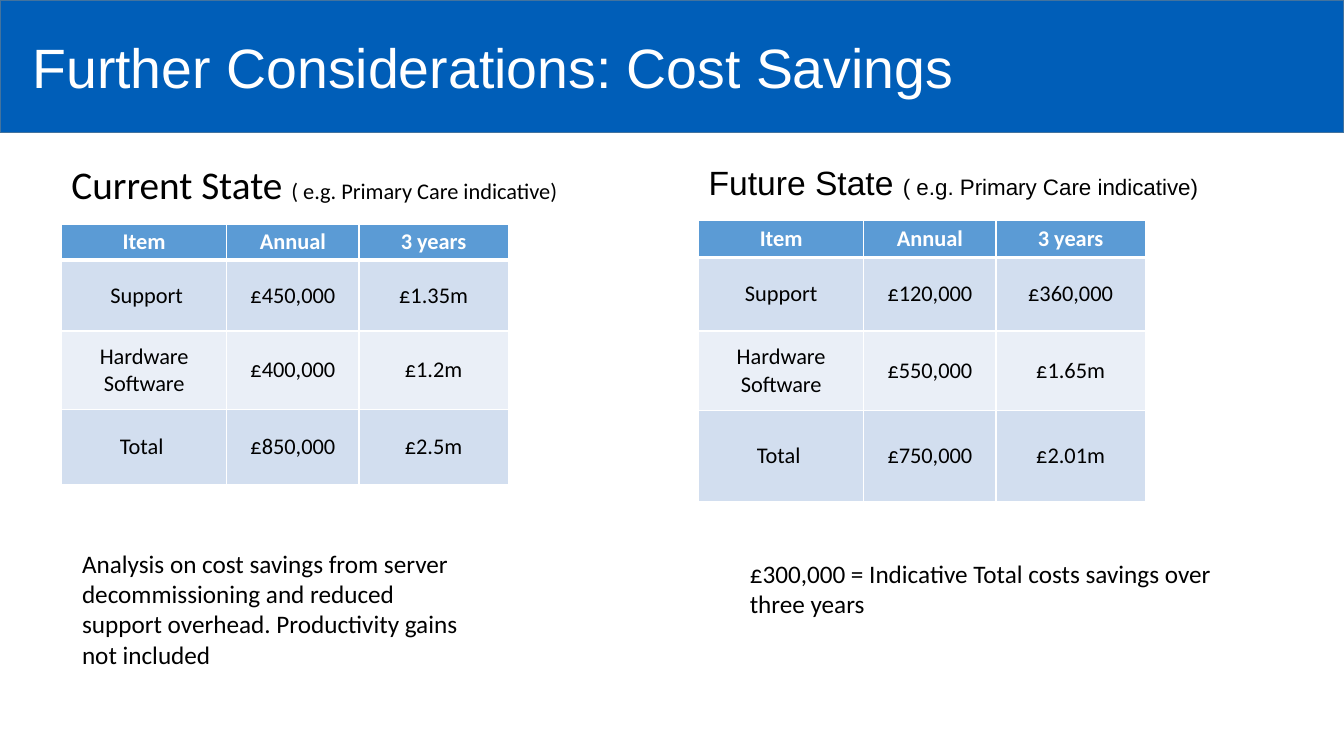
from lxml.etree import SubElement
from pptx import Presentation
from pptx.dml.color import RGBColor
from pptx.enum.shapes import MSO_SHAPE
from pptx.enum.text import MSO_ANCHOR, MSO_AUTO_SIZE, PP_ALIGN
from pptx.oxml import parse_xml
from pptx.oxml.ns import nsdecls, qn
from pptx.util import Pt

WHITE, BLACK = "FFFFFF", "000000"
COLUMN_WIDTHS = [118, 94.5, 106.5]
ROW_FILLS = ["5B9BD5", "D2DEEF", "EAEFF7", "D2DEEF"]
HEADINGS = ["Item", "Annual", "3 years"]
HEADING_LINE = {"line_spacing": 0.9, "space_before": Pt(0), "alignment": PP_ALIGN.LEFT}
FRAME = {"word_wrap": True, "auto_size": MSO_AUTO_SIZE.NONE}


def apply(target, values):
    for name, value in values.items():
        setattr(target, name, value)


def colour(hex_string):
    return RGBColor.from_string(hex_string)


def place(part, left, top, width, height):
    apply(part, {"left": Pt(left), "top": Pt(top), "width": Pt(width), "height": Pt(height)})


def write(paragraph, text, size, hex_string, font="Calibri", bold=False):
    run = paragraph.add_run()
    run.text = text
    apply(run.font, {"size": Pt(size), "name": font, "bold": bold})
    run.font.color.rgb = colour(hex_string)


def draw_title(slide, left, top, width, height):
    banner = slide.shapes.add_shape(MSO_SHAPE.RECTANGLE, Pt(left), Pt(top), Pt(width), Pt(height))
    banner.shadow.inherit = False
    banner.fill.solid()
    banner.fill.fore_color.rgb = colour("005EB8")
    banner.line.color.rgb = colour("43739E")
    banner.line.width = Pt(1)
    slide.shapes._spTree.insert(2, banner._element)
    title = slide.shapes.title
    place(title, left + 16, top + 12, 696, 76.5)
    apply(title.text_frame, {**FRAME, "vertical_anchor": MSO_ANCHOR.MIDDLE})
    line = title.text_frame.paragraphs[0]
    apply(line, HEADING_LINE)
    write(line, "Further Considerations: Cost Savings", 39.6, WHITE, "Arial")


def draw_heading(heading, left, top, state, size, font):
    place(heading, left, top, 393, 38)
    apply(heading.text_frame, {**FRAME, "vertical_anchor": MSO_ANCHOR.TOP})
    line = heading.text_frame.paragraphs[0]
    properties = line._p.get_or_add_pPr()
    properties.set("marL", "0")
    properties.set("indent", "0")
    SubElement(properties, qn("a:buNone"))
    apply(line, HEADING_LINE)
    write(line, state + " ", size, BLACK, font)
    write(line, "( e.g. Primary Care indicative)", 16, BLACK, font)


def draw_borders(cell, row):
    widths = {"L": 1, "R": 1, "T": 3 if row == 1 else 1, "B": 3 if row == 0 else 1}
    for position, (side, width) in enumerate(widths.items()):
        border = parse_xml(
            f'<a:ln{side} {nsdecls("a")} w="{Pt(width)}"><a:solidFill>'
            f'<a:srgbClr val="{WHITE}"/></a:solidFill></a:ln{side}>'
        )
        cell._tc.get_or_add_tcPr().insert(position, border)


def draw_costs(slide, left, top, row_heights, costs):
    rows = [HEADINGS] + costs
    table = slide.shapes.add_table(
        len(rows), len(HEADINGS), Pt(left), Pt(top), Pt(sum(COLUMN_WIDTHS)), Pt(sum(row_heights))
    ).table
    for column, width in zip(table.columns, COLUMN_WIDTHS):
        column.width = Pt(width)
    for row, (entries, height) in enumerate(zip(rows, row_heights)):
        table.rows[row].height = Pt(height)
        for column, entry in enumerate(entries):
            cell = table.cell(row, column)
            apply(cell, {"vertical_anchor": MSO_ANCHOR.MIDDLE, "margin_top": Pt(2), "margin_bottom": Pt(2)})
            cell.fill.solid()
            cell.fill.fore_color.rgb = colour(ROW_FILLS[row])
            draw_borders(cell, row)
            for number, text in enumerate(entry.split("\n")):
                line = cell.text_frame.add_paragraph() if number else cell.text_frame.paragraphs[0]
                line.alignment = PP_ALIGN.CENTER
                write(line, text, 16, BLACK if row else WHITE, bold=row == 0)


def draw_remark(slide, left, top, width, height, text):
    remark = slide.shapes.add_textbox(Pt(left), Pt(top), Pt(width), Pt(height))
    apply(remark.text_frame, {"word_wrap": True, "auto_size": MSO_AUTO_SIZE.SHAPE_TO_FIT_TEXT})
    write(remark.text_frame.paragraphs[0], text, 18, BLACK)


def draw_current_state(slide, left, top):
    heading = slide.shapes.add_textbox(Pt(left), Pt(top), Pt(393), Pt(38))
    draw_heading(heading, left, top, "Current State", 28, "Calibri")
    draw_costs(slide, left, top + 45, [25.5, 51, 56, 53.5], [
        [" Support", "£450,000", "£1.35m"],
        ["Hardware Software", "£400,000", "£1.2m"],
        ["Total ", "£850,000", "£2.5m"],
    ])
    draw_remark(slide, left + 7.5, top + 273, 284, 94.5,
                "Analysis on cost savings from server decommissioning and reduced "
                "support overhead. Productivity gains not included")


def draw_future_state(slide, left, top):
    draw_heading(slide.placeholders[1], left, top, "Future State", 24, "Arial")
    draw_costs(slide, left, top + 42.5, [26.5, 52.5, 57, 64.5], [
        ["Support", "£120,000", "£360,000"],
        ["Hardware\nSoftware", "£550,000", "£1.65m"],
        ["Total ", "£750,000", "£2.01m"],
    ])
    draw_remark(slide, left + 29.5, top + 280, 363, 51,
                "£300,000 = Indicative Total costs savings over three years")


def main():
    deck = Presentation()
    apply(deck, {"slide_width": Pt(960), "slide_height": Pt(540)})
    slide = deck.slides.add_slide(deck.slide_layouts[1])
    draw_title(slide, 0, 0, 960, 94.5)
    draw_current_state(slide, 44, 115)
    draw_future_state(slide, 499, 115)
    deck.save("out.pptx")


if __name__ == "__main__":
    main()
